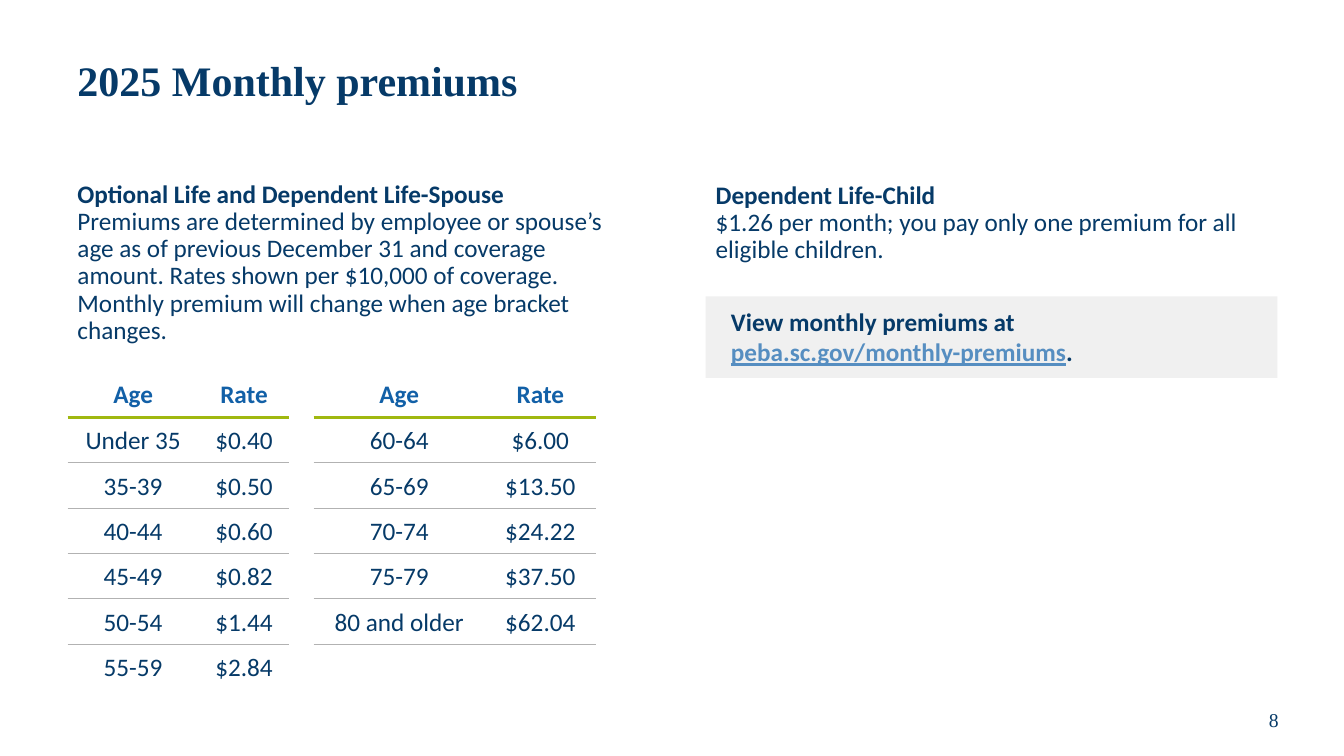
from pptx import Presentation
from pptx.dml.color import RGBColor
from pptx.enum.shapes import MSO_SHAPE
from pptx.enum.text import MSO_ANCHOR, PP_ALIGN
from pptx.oxml import parse_xml
from pptx.oxml.ns import nsdecls
from pptx.util import Pt

EMU_PER_PX = 9144  # 100 px to the inch
NAVY = RGBColor(0x06, 0x3A, 0x68)
BLUE = RGBColor(0x12, 0x60, 0xA7)
LINK_BLUE = RGBColor(0x56, 0x8E, 0xC1)
PALE_GRAY = RGBColor(0xF0, 0xF0, 0xF0)
RULE_GRAY = RGBColor(0xB2, 0xB2, 0xB2)
GREEN = RGBColor(0xA0, 0xB8, 0x10)
SANS, SERIF = "Calibri", "Times New Roman"
LEFT, CENTER = PP_ALIGN.LEFT, PP_ALIGN.CENTER
TOP, MIDDLE = MSO_ANCHOR.TOP, MSO_ANCHOR.MIDDLE
RECTANGLE = MSO_SHAPE.RECTANGLE
BREAK = "\n"
HEADER_RULE = (GREEN, 2.25)
ROW_RULE = (RULE_GRAY, 0.5)


def px(*lengths):
    return [length * EMU_PER_PX for length in lengths]


class PremiumSlide:
    def __init__(self, slide, font=SANS, size=18, color=NAVY):
        self.shapes = slide.shapes
        self.font, self.size, self.color = font, size, color

    def add_runs(self, frame, runs, align=LEFT, spacing=None, font=None, size=None):
        """Fill one paragraph with (text, style) runs."""
        paragraph = frame.paragraphs[0]
        paragraph.alignment = align
        if spacing:
            paragraph.line_spacing = spacing
        for text, style in runs:
            if text == BREAK:
                paragraph.add_line_break()
                continue
            run = paragraph.add_run()
            run.text = text
            run.font.name = font or self.font
            run.font.size = Pt(size or self.size)
            run.font.bold = style.get("bold", False)
            run.font.underline = style.get("underline", False)
            run.font.color.rgb = style.get("color", self.color)

    def text(self, box, runs, anchor=TOP, **paragraph_style):
        frame = self.shapes.add_textbox(*px(*box)).text_frame
        frame.word_wrap = True
        frame.vertical_anchor = anchor
        self.add_runs(frame, runs, **paragraph_style)

    def callout(self, box, runs):
        panel = self.shapes.add_shape(RECTANGLE, *px(*box))
        panel.shadow.inherit = False
        panel.fill.solid()
        panel.fill.fore_color.rgb = PALE_GRAY
        panel.line.fill.background()
        frame = panel.text_frame
        frame.word_wrap = True
        frame.vertical_anchor = TOP
        (frame.margin_left, frame.margin_top,
         frame.margin_right, frame.margin_bottom) = px(25, 10, 25, 10)
        self.add_runs(frame, runs)

    def border(self, cell, side, rule=None):
        color, width = rule or (None, 0)
        fill = (f'<a:solidFill><a:srgbClr val="{color}"/></a:solidFill>'
                if rule else "<a:noFill/>")
        cell._tc.get_or_add_tcPr().append(parse_xml(
            f'<a:ln{side} {nsdecls("a")} w="{Pt(width)}">{fill}</a:ln{side}>'))

    def rate_table(self, box, widths, rows, gap):
        table = self.shapes.add_table(len(rows), len(widths), *px(*box)).table
        table.first_row = table.horz_banding = False
        for column, width in zip(table.columns, px(*widths)):
            column.width = width
        for row in table.rows:
            row.height = px(box[3])[0] // len(rows)
        table.cell(0, gap).merge(table.cell(len(rows) - 1, gap))
        rules = [None, HEADER_RULE] + [ROW_RULE] * (len(rows) - 2) + [None]
        for r, values in enumerate(rows):
            for c, value in enumerate(values):
                cell = table.cell(r, c)
                ruled = c != gap
                self.border(cell, "L")
                self.border(cell, "R")
                self.border(cell, "T", rules[r] if ruled else None)
                self.border(cell, "B", rules[r + 1] if ruled else None)
                cell.fill.background()
                cell.vertical_anchor = MIDDLE
                if not value:
                    continue
                header = r == 0
                if not header:
                    (cell.margin_left, cell.margin_top,
                     cell.margin_right, cell.margin_bottom) = px(7, 0, 7, 0)
                style = {"bold": True, "color": BLUE} if header else {}
                self.add_runs(cell.text_frame, [(value, style)], CENTER,
                              None if header else 1.07)


def main():
    deck = Presentation()
    deck.slide_width, deck.slide_height = px(1333, 750)
    page = PremiumSlide(deck.slides.add_slide(deck.slide_layouts[6]))
    bold = {"bold": True}

    # Title and page number
    page.text((67, 25, 1200, 115), [("2025 Monthly premiums", bold)],
              anchor=MIDDLE, spacing=0.9, font=SERIF, size=30)
    page.text((1205, 689, 117, 50), [("8", {})],
              anchor=MIDDLE, align=CENTER, font=SERIF, size=14)

    # Explanations
    page.text((700, 176, 567, 512), [
        ("Dependent Life-Child", bold), (BREAK, {}),
        ("$1.26 per month; you pay only one premium for all eligible children.", {}),
    ], spacing=0.9)
    page.text((67, 175, 567, 513), [
        ("Optional Life and Dependent Life-Spouse", bold), (BREAK, {}),
        ("Premiums are determined by employee or spouse’s age as of previous "
         "December 31 and coverage amount. Rates shown per $10,000 of coverage. "
         "Monthly premium will change when age bracket changes.", {}),
    ], spacing=0.9)

    # Where to find premiums
    page.callout((700, 294, 567, 81), [
        ("View monthly premiums at ", bold), (BREAK, {}),
        ("peba.sc.gov/monthly-premiums",
         {"bold": True, "underline": True, "color": LINK_BLUE}),
        (".", bold),
    ])

    # Rates by age
    page.rate_table((67, 369, 523, 315), (130, 90, 23, 170, 110), [
        ("Age", "Rate", "", "Age", "Rate"),
        ("Under 35", "$0.40", "", "60-64", "$6.00"),
        ("35-39", "$0.50", "", "65-69", "$13.50"),
        ("40-44", "$0.60", "", "70-74", "$24.22"),
        ("45-49", "$0.82", "", "75-79", "$37.50"),
        ("50-54", "$1.44", "", "80 and older", "$62.04"),
        ("55-59", "$2.84", "", "", ""),
    ], gap=2)

    deck.save("out.pptx")


if __name__ == "__main__":
    main()
